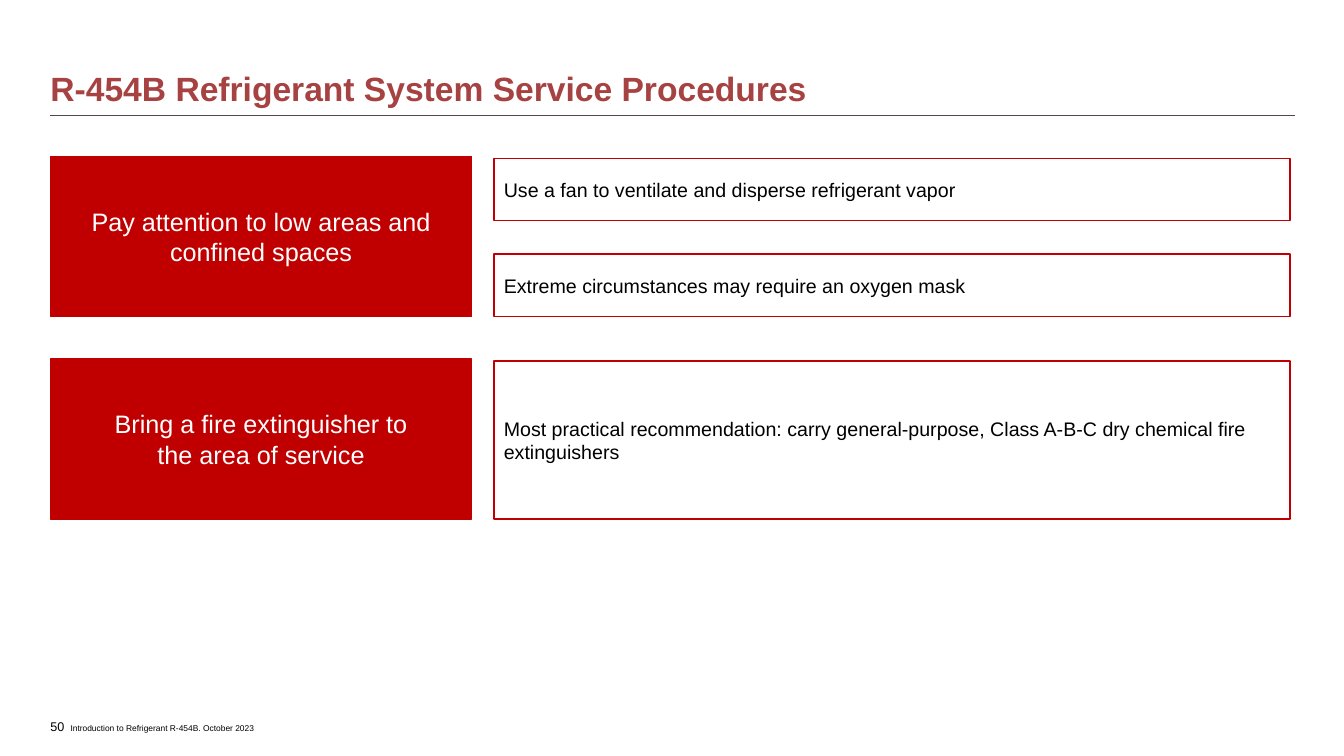
from lxml import etree
from pptx import Presentation
from pptx.dml.color import RGBColor
from pptx.enum.shapes import MSO_CONNECTOR, MSO_SHAPE
from pptx.enum.text import MSO_ANCHOR, MSO_AUTO_SIZE, PP_ALIGN
from pptx.oxml.ns import qn
from pptx.util import Pt

RECTANGLE = MSO_SHAPE.RECTANGLE
STRAIGHT = MSO_CONNECTOR.STRAIGHT
TOP, MIDDLE, BOTTOM = MSO_ANCHOR.TOP, MSO_ANCHOR.MIDDLE, MSO_ANCHOR.BOTTOM
LEFT, CENTER = PP_ALIGN.LEFT, PP_ALIGN.CENTER
NO_AUTOFIT = MSO_AUTO_SIZE.NONE

FONT = "Arial"
RED, TITLE_RED, GRAY = "C00000", "A64241", "524743"
BLACK, WHITE = "000000", "FFFFFF"

MARGIN = 36
CONTENT_WIDTH = 889.2
ROW_TOP = 111.6
ROW_HEIGHT = 114.48
ROW_PITCH = 144.72
TOPIC_WIDTH = 300.96
NOTE_LEFT = 316.8
NOTE_INSET = 1.44
NOTE_GAP = 23.76

PROCEDURES = [
    ("Pay attention to low areas and confined spaces",
     ["Use a fan to ventilate and disperse refrigerant vapor",
      "Extreme circumstances may require an oxygen mask"]),
    ("Bring a fire extinguisher to\nthe area of service",
     ["Most practical recommendation: carry general-purpose, "
      "Class A-B-C dry chemical fire extinguishers"]),
]


def color(hex_string):
    return RGBColor.from_string(hex_string)


def write(shape, text, size, hex_string, anchor=MIDDLE, alignment=LEFT, bold=False):
    frame = shape.text_frame
    frame.text = text
    frame.word_wrap = True
    frame.auto_size = NO_AUTOFIT
    frame.vertical_anchor = anchor
    for paragraph in frame.paragraphs:
        paragraph.alignment = alignment
        for run in paragraph.runs:
            run.font.name = FONT
            run.font.size = Pt(size)
            run.font.bold = bold
            run.font.color.rgb = color(hex_string)


def remove_insets(shape):
    frame = shape.text_frame
    frame.margin_left = frame.margin_right = 0
    frame.margin_top = frame.margin_bottom = 0


def add_box(slide, left, top, width, height, fill=None):
    shape = slide.shapes.add_shape(RECTANGLE, Pt(left), Pt(top), Pt(width), Pt(height))
    shape.shadow.inherit = False
    if fill:
        shape.fill.solid()
        shape.fill.fore_color.rgb = color(fill)
    else:
        shape.fill.background()
    shape.line.color.rgb = color(RED)
    shape.line.width = Pt(1)
    return shape


def add_header(slide, left, top, width, height):
    title = slide.shapes.title
    title.left, title.top = Pt(left), Pt(top)
    title.width, title.height = Pt(width), Pt(height)
    write(title, "R-454B Refrigerant System Service Procedures", 24, TITLE_RED,
          anchor=BOTTOM, bold=True)
    title.text_frame.paragraphs[0].line_spacing = 0.9
    remove_insets(title)

    rule_top = Pt(top + height + 5.04)
    rule = slide.shapes.add_connector(STRAIGHT, Pt(left), rule_top, Pt(left + width), rule_top)
    rule.line.color.rgb = color(GRAY)
    rule.line.width = Pt(0.75)
    etree.SubElement(rule._element.spPr, qn("a:effectLst"))


def add_procedure(slide, left, top, width, height, topic, notes):
    topic_box = add_box(slide, left, top, TOPIC_WIDTH, height, fill=RED)
    write(topic_box, topic, 18, WHITE, alignment=CENTER)

    notes_height = height - NOTE_INSET
    note_height = (notes_height - NOTE_GAP * (len(notes) - 1)) / len(notes)
    for index, note in enumerate(notes):
        note_top = top + NOTE_INSET + index * (note_height + NOTE_GAP)
        note_box = add_box(slide, left + NOTE_LEFT, note_top, width - NOTE_LEFT, note_height)
        write(note_box, note, 14, BLACK)


def add_footer(slide, left, top):
    number = slide.shapes.add_textbox(Pt(left), Pt(top), Pt(28.08), Pt(17.28))
    write(number, "50", 9, BLACK)
    remove_insets(number)
    caption = slide.shapes.add_textbox(Pt(left + 14.4), Pt(top + 5.76), Pt(158.4), Pt(7.2))
    write(caption, "Introduction to Refrigerant R-454B. October 2023", 6, BLACK, anchor=TOP)
    remove_insets(caption)


def main():
    presentation = Presentation()
    presentation.slide_width, presentation.slide_height = Pt(960), Pt(540)
    slide = presentation.slides.add_slide(presentation.slide_layouts[5])
    add_header(slide, MARGIN, 15.12, CONTENT_WIDTH, 62.64)
    for index, (topic, notes) in enumerate(PROCEDURES):
        add_procedure(slide, MARGIN, ROW_TOP + index * ROW_PITCH, 885.6, ROW_HEIGHT, topic, notes)
    add_footer(slide, MARGIN, 510.48)
    presentation.save("out.pptx")


if __name__ == "__main__":
    main()
